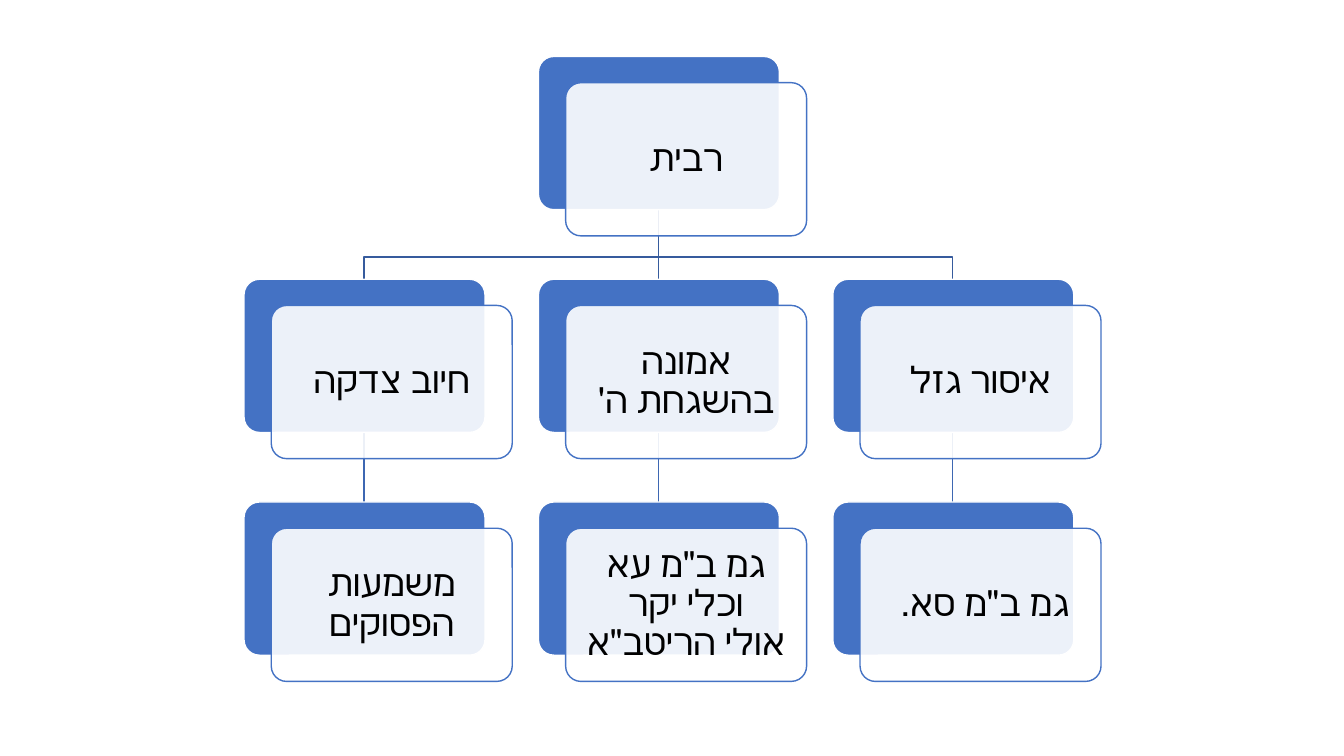
import pptx
import pptx.dml.color
import pptx.enum.lang
import pptx.enum.shapes
import pptx.enum.text
import pptx.oxml.ns
import pptx.util
from lxml import etree
from pptx.util import Inches

BLUE = "4472C4"
WHITE = "FFFFFF"
TRUNK_BLUE = "365B9D"
BRANCH_BLUE = "3E67B2"

CARD_WIDTH, CARD_HEIGHT = 2.39, 1.52
PANEL_RIGHT, PANEL_DOWN = 0.27, 0.26
CARD_CENTER = 1.19
COLUMNS = [2.42 + 2.92 * column for column in range(3)]
ROWS = [0.56 + 2.21 * row for row in range(3)]
TRUNK_BEND = 2.55

ROOT = "רבית"
BRANCHES = [
    ("חיוב צדקה", "משמעות הפסוקים"),
    ("אמונה בהשגחת ה'", "גמ ב\"מ עא\vוכלי יקר\vאולי הריטב\"א"),
    ("איסור גזל", "גמ ב\"מ סא. "),
]


def color(hex_value):
    """Turn a hex string into a colour."""
    return pptx.dml.color.RGBColor.from_string(hex_value)


def add_sub(parent, tag, **attributes):
    """Append a DrawingML child element."""
    return etree.SubElement(parent, pptx.oxml.ns.qn(tag), **attributes)


def set_line(line, hex_value):
    """Give a line its colour and a width of one point."""
    line.color.rgb = color(hex_value)
    line.width = pptx.util.Pt(1)


def add_rounded(slide, left, top, fill, outline):
    """Add one rounded rectangle of card size."""
    rounded = slide.shapes.add_shape(
        pptx.enum.shapes.MSO_SHAPE.ROUNDED_RECTANGLE,
        Inches(left), Inches(top), Inches(CARD_WIDTH), Inches(CARD_HEIGHT))
    rounded.adjustments[0] = 0.1
    rounded.shadow.inherit = False
    rounded.fill.solid()
    rounded.fill.fore_color.rgb = color(fill)
    set_line(rounded.line, outline)
    return rounded


def write_label(panel, label):
    """Write a centred right-to-left label in a panel."""
    frame = panel.text_frame
    frame.word_wrap = True
    frame.vertical_anchor = pptx.enum.text.MSO_ANCHOR.MIDDLE
    frame.margin_left = frame.margin_right = Inches(0.11)
    frame.margin_top = frame.margin_bottom = Inches(0.11)
    paragraph = frame.paragraphs[0]
    paragraph.text = label
    paragraph.alignment = pptx.enum.text.PP_ALIGN.CENTER
    paragraph.line_spacing = 0.9
    paragraph.font.size = pptx.util.Pt(26)
    paragraph.font.color.rgb = color("000000")
    paragraph.font.name = "Calibri"
    paragraph._p.get_or_add_pPr().set("rtl", "1")
    for run in paragraph.runs:
        run.font.language_id = pptx.enum.lang.MSO_LANGUAGE_ID.HEBREW


def add_card(slide, left, top, label):
    """Add a blue card with a translucent labelled panel in front."""
    add_rounded(slide, left, top, BLUE, WHITE)
    panel = add_rounded(slide, left + PANEL_RIGHT, top + PANEL_DOWN, WHITE, BLUE)
    panel_color = next(panel.fill._xPr.iter(pptx.oxml.ns.qn("a:srgbClr")))
    add_sub(panel_color, "a:alpha", val="90000")
    write_label(panel, label)


def add_straight(slide, x, top, bottom, hex_value):
    """Add a vertical connector."""
    connector = slide.shapes.add_connector(
        pptx.enum.shapes.MSO_CONNECTOR.STRAIGHT,
        Inches(x), Inches(top), Inches(x), Inches(bottom))
    set_line(connector.line, hex_value)
    add_sub(connector._element.spPr, "a:effectLst")


def add_elbow(slide, start_x, end_x, top, bottom):
    """Add a bent line from the root to an outer branch."""
    builder = slide.shapes.build_freeform(Inches(start_x), Inches(top))
    corners = [(start_x, TRUNK_BEND), (end_x, TRUNK_BEND), (end_x, bottom)]
    builder.add_line_segments(
        [(Inches(x), Inches(y)) for x, y in corners], close=False)
    elbow = builder.convert_to_shape()
    elbow.shadow.inherit = False
    elbow.fill.background()
    set_line(elbow.line, TRUNK_BLUE)


def main():
    """Build the three-level hierarchy slide."""
    presentation = pptx.Presentation()
    presentation.slide_width = Inches(13.33)
    presentation.slide_height = Inches(7.5)
    slide = presentation.slides.add_slide(presentation.slide_layouts[6])

    root_row, branch_row, leaf_row = ROWS
    root_left = COLUMNS[1]
    root_center = root_left + CARD_CENTER
    root_bottom = root_row + CARD_HEIGHT
    for left in COLUMNS:
        center = left + CARD_CENTER
        add_straight(slide, center, branch_row + CARD_HEIGHT, leaf_row, BRANCH_BLUE)
        if left == root_left:
            add_straight(slide, center, root_bottom, branch_row, TRUNK_BLUE)
        else:
            add_elbow(slide, root_center, center, root_bottom, branch_row)

    add_card(slide, root_left, root_row, ROOT)
    for left, (branch, leaf) in zip(COLUMNS, BRANCHES):
        add_card(slide, left, branch_row, branch)
        add_card(slide, left, leaf_row, leaf)

    presentation.save("out.pptx")


if __name__ == "__main__":
    main()
